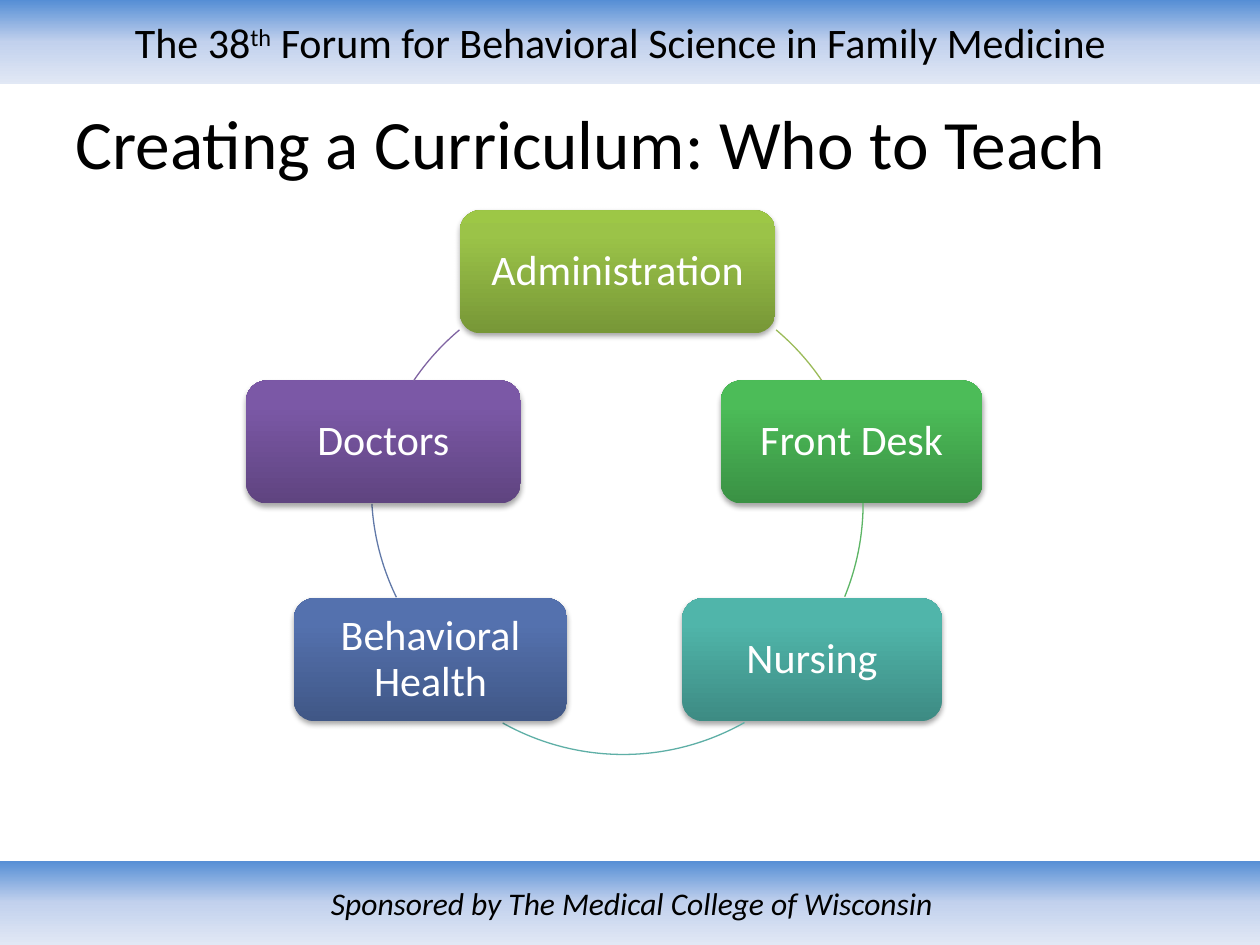
from dataclasses import dataclass

from lxml.etree import SubElement
from pptx import Presentation
from pptx.dml.color import RGBColor
from pptx.enum.shapes import MSO_SHAPE
from pptx.enum.text import MSO_ANCHOR, PP_ALIGN
from pptx.oxml.ns import qn
from pptx.util import Cm, Pt


@dataclass(frozen=True)
class Theme:
    font: str = "Calibri"
    ink: str = "000000"
    light: str = "FFFFFF"
    band: tuple = ((0, "558ED5"), (50, "C2D1ED"), (100, "E1E8F5"))
    title_size: float = 39.6
    header_size: int = 24
    node_size: int = 24
    footer_size: int = 18
    line_width: float = 0.75


THEME = Theme()

# Content (lengths in cm)
PAGE_WIDTH, PAGE_HEIGHT = 25.4, 19.05
BAND_HEIGHT = 1.7
NODE_HEIGHT, NODE_INSET = 2.48, 0.38
RING_SIZE = 9.93

HEADER = [("The 38", False), ("th", True),
          (" Forum for Behavioral Science in Family Medicine", False)]
FOOTER = "Sponsored by The Medical College of Wisconsin"
TITLE = "Creating a Curriculum: Who to Teach"

# Text, centre x, top, width, gradient colours from bottom to top
NODES = [
    ("Administration", 12.45, 4.24, 6.36, ("779737", "9BC348", "9DC746")),
    ("Front Desk", 17.17, 7.67, 5.28, ("3A9144", "4CBC58", "4ABF57")),
    ("Nursing", 16.37, 12.06, 5.23, ("3D8B83", "50B5AA", "4EB8AC")),
    ("Behavioral Health", 8.68, 12.06, 5.51, ("405786", "5471AE", "5271B0")),
    ("Doctors", 7.73, 7.67, 5.54, ("5F4480", "7B58A6", "7C57A8")),
]
NODE_STOPS = (0, 80, 100)

# Ring pieces: circle left, circle top, start and end in degrees, colour
ARCS = [
    (7.49, 5.49, 310, 325.9, "9BBB59"),
    (7.47, 5.18, 0, 22.3, "5CB565"),
    (7.6, 5.28, 60.5, 119.3, "5EAFA6"),
    (7.49, 4.9, 154, 176.6, "6179A8"),
    (7.49, 5.49, 214, 230, "8064A2"),
]
ANGLE_UNIT = 0.6  # adjustment value of one degree


def write(box, text, size, color=THEME.ink, align=PP_ALIGN.CENTER,
          italic=False, spacing=None, inset=None):
    """Fill a box with one paragraph; text is a string or (text, raised) pairs."""
    frame = box.text_frame
    frame.word_wrap = True
    frame.vertical_anchor = MSO_ANCHOR.MIDDLE
    if inset is not None:
        frame.margin_left = frame.margin_right = Cm(inset)
        frame.margin_top = frame.margin_bottom = Cm(inset)
    para = frame.paragraphs[0]
    para.alignment = align
    if spacing:
        para.line_spacing = spacing
    for words, raised in [(text, False)] if isinstance(text, str) else text:
        span = para.add_run()
        span.text = words
        span.font.name = THEME.font
        span.font.size = Pt(size)
        span.font.italic = italic
        span.font.color.rgb = RGBColor.from_string(color)
        if raised:
            span.font._element.set("baseline", "30000")


def add_gradient_box(page, kind, left, top, width, height, stops, angle):
    box = page.shapes.add_shape(kind, Cm(left), Cm(top), Cm(width), Cm(height))
    box.shadow.inherit = False
    box.line.fill.background()
    box.fill.gradient()
    box.fill.gradient_angle = angle
    stop_list = box._element.spPr.find(".//" + qn("a:gsLst"))
    for old in list(stop_list):
        stop_list.remove(old)
    for position, color in stops:
        stop = SubElement(stop_list, qn("a:gs"), pos=str(position * 1000))
        SubElement(stop, qn("a:srgbClr"), val=color)
    return box


def add_shadow(box):
    effects = box._element.spPr.find(qn("a:effectLst"))
    shadow = SubElement(effects, qn("a:outerShdw"), blurRad="40000",
                        dist="23000", dir="5400000", rotWithShape="0")
    color = SubElement(shadow, qn("a:srgbClr"), val="000000")
    SubElement(color, qn("a:alpha"), val="35000")


def add_arc(page, left, top, start, end, color):
    arc = page.shapes.add_shape(MSO_SHAPE.ARC, Cm(left), Cm(top),
                                Cm(RING_SIZE), Cm(RING_SIZE))
    arc.adjustments[0] = start * ANGLE_UNIT
    arc.adjustments[1] = end * ANGLE_UNIT
    arc.shadow.inherit = False
    arc.fill.background()
    arc.line.color.rgb = RGBColor.from_string(color)
    arc.line.width = Pt(THEME.line_width)


def main():
    deck = Presentation()
    deck.slide_width, deck.slide_height = Cm(PAGE_WIDTH), Cm(PAGE_HEIGHT)
    page = deck.slides.add_slide(deck.slide_layouts[6])

    # Header and footer bands
    header = add_gradient_box(page, MSO_SHAPE.RECTANGLE, 0, 0, PAGE_WIDTH,
                              BAND_HEIGHT, THEME.band, 270)
    write(header, HEADER, THEME.header_size)
    header.text_frame.margin_right = Cm(0.63)
    footer = add_gradient_box(page, MSO_SHAPE.RECTANGLE, 0,
                              PAGE_HEIGHT - BAND_HEIGHT, PAGE_WIDTH + 0.08,
                              BAND_HEIGHT, THEME.band, 270)
    write(footer, FOOTER, THEME.footer_size, italic=True)

    # Title
    title = page.shapes.add_textbox(Cm(1.27), Cm(1.9), Cm(22.86), Cm(1.9))
    write(title, TITLE, THEME.title_size, align=PP_ALIGN.LEFT)

    # Cycle of staff groups, each followed by its piece of the ring
    for (text, center, top, width, colors), arc in zip(NODES, ARCS):
        node = add_gradient_box(page, MSO_SHAPE.ROUNDED_RECTANGLE,
                                center - width / 2, top, width, NODE_HEIGHT,
                                zip(NODE_STOPS, colors), 90)
        add_shadow(node)
        write(node, text, THEME.node_size, color=THEME.light, spacing=0.9,
              inset=NODE_INSET)
        add_arc(page, *arc)

    deck.save("out.pptx")


if __name__ == "__main__":
    main()
